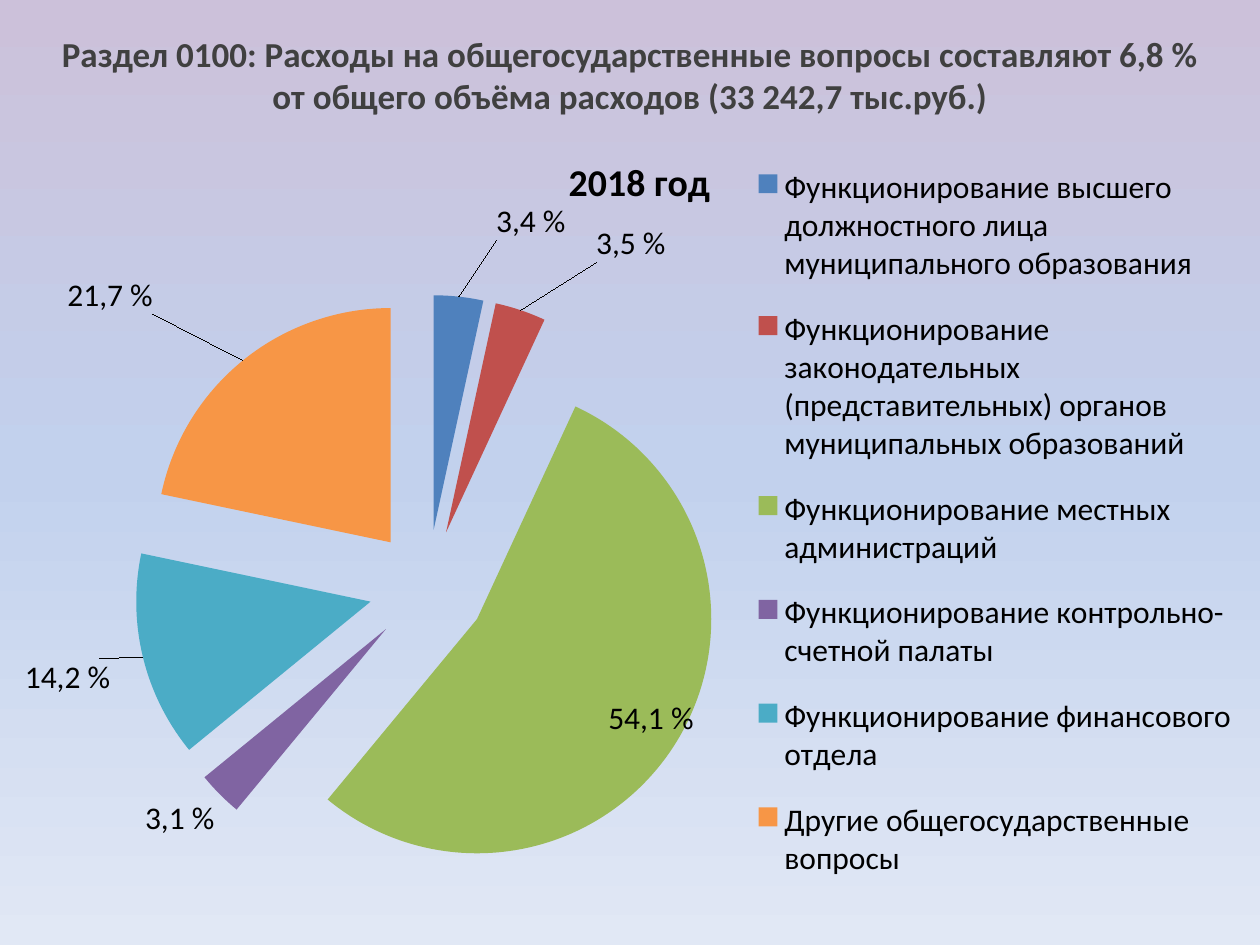
from lxml.etree import SubElement
from pptx import Presentation
from pptx.chart.data import CategoryChartData
from pptx.dml.color import RGBColor
from pptx.enum.chart import XL_CHART_TYPE, XL_LABEL_POSITION, XL_LEGEND_POSITION
from pptx.enum.text import MSO_ANCHOR, PP_ALIGN
from pptx.oxml import parse_xml
from pptx.oxml.ns import nsdecls, qn
from pptx.util import Cm, Pt

FONT = "Calibri"
BLACK = RGBColor(0x00, 0x00, 0x00)
DARK_GREY = RGBColor(0x40, 0x40, 0x40)
LILAC = RGBColor(0xCC, 0xC1, 0xDA)
SKY = RGBColor(0xC2, 0xD1, 0xED)
PALE = RGBColor(0xE1, 0xE8, 0xF5)
BLUE = RGBColor(0x4F, 0x81, 0xBD)
RED = RGBColor(0xC0, 0x50, 0x4D)
GREEN = RGBColor(0x9B, 0xBB, 0x59)
PURPLE = RGBColor(0x80, 0x64, 0xA2)
TEAL = RGBColor(0x4B, 0xAC, 0xC6)
ORANGE = RGBColor(0xF7, 0x96, 0x46)

HEADING = ("Раздел 0100: Расходы на общегосударственные вопросы составляют 6,8 % "
           "от общего объёма расходов (33 242,7 тыс.руб.)")
YEAR = "2018 год"

# Category, share in percent, slice colour, label shift (fractions of the chart)
SLICES = [
    ("Функционирование высшего должностного лица муниципального образования",
     3.4, BLUE, (0.03, -0.06)),
    ("Функционирование законодательных (представительных) органов "
     "муниципальных образований", 3.5, RED, (0.06, -0.05)),
    ("Функционирование местных администраций", 54.1, GREEN, (-0.06, -0.06)),
    ("Функционирование контрольно-счетной палаты", 3.1, PURPLE, None),
    ("Функционирование финансового отдела", 14.2, TEAL, (-0.03, 0)),
    ("Другие общегосударственные вопросы", 21.7, ORANGE, (-0.07, -0.05)),
]


def write_text(frame, text, size, color=BLACK, bold=False, align=None):
    """Put one formatted span into a text frame."""
    para = frame.paragraphs[0]
    para.alignment = align
    span = para.add_run()
    span.text = text
    span.font.name = FONT
    span.font.size = Pt(size)
    span.font.bold = bold
    span.font.color.rgb = color
    return para


def paint_background(page, colors):
    """Fill the page with a vertical gradient of evenly spaced colours."""
    step = 100000 // (len(colors) - 1)
    stops = "".join(
        f'<a:gs pos="{index * step}"><a:srgbClr val="{color}"/></a:gs>'
        for index, color in enumerate(colors))
    fill = page.background.fill
    fill.gradient()
    gradient = page.element.xpath(".//p:bgPr/a:gradFill")[0]
    gradient.getparent().replace(gradient, parse_xml(
        f'<a:gradFill {nsdecls("a")} rotWithShape="1"><a:gsLst>{stops}</a:gsLst>'
        '<a:lin ang="5400000" scaled="0"/></a:gradFill>'))


def add_heading(page):
    box = page.shapes.title
    box.left, box.top, box.width, box.height = Cm(0.7), Cm(0.53), Cm(24), Cm(1.4)
    box.text_frame.word_wrap = True
    box.text_frame.vertical_anchor = MSO_ANCHOR.TOP
    para = write_text(box.text_frame, HEADING, 20, color=DARK_GREY, bold=True,
                      align=PP_ALIGN.CENTER)
    para.space_before = Pt(4)


def place(element, index, **fractions):
    """Give a chart part a manual layout, as child number index."""
    for old in element.findall(qn("c:layout")):
        element.remove(old)
    layout = parse_xml(f'<c:layout {nsdecls("c")}><c:manualLayout/></c:layout>')
    for name, value in fractions.items():
        SubElement(layout[0], qn(f"c:{name}"), val=str(value))
    element.insert(index, layout)


def style_slices(series):
    """Pull the slices apart, colour them and label them."""
    explosion = parse_xml(f'<c:explosion {nsdecls("c")} val="25"/>')
    series.data_labels.show_value = True
    series.data_labels.position = XL_LABEL_POSITION.OUTSIDE_END
    for index, (_, share, color, shift) in enumerate(SLICES):
        point = series.points[index]
        point.format.fill.solid()
        point.format.fill.fore_color.rgb = color
        label = point.data_label
        write_text(label.text_frame, f"{share} %".replace(".", ","), 18)
        label.position = XL_LABEL_POSITION.OUTSIDE_END
        if shift:
            label_element = series.data_labels._element.xpath("c:dLbl")[index]
            place(label_element, 1, x=shift[0], y=shift[1])
    series._element.find(qn("c:tx")).addnext(explosion)


def add_pie(page):
    data = CategoryChartData()
    data.categories = [name for name, *_ in SLICES]
    data.add_series(YEAR, [share for _, share, *_ in SLICES])
    chart = page.shapes.add_chart(XL_CHART_TYPE.PIE, Cm(0.5), Cm(2.34),
                                  Cm(24.6), Cm(16.4), data).chart
    chart.font.name = FONT
    chart.font.size = Pt(18)
    chart.font.color.rgb = BLACK

    # Title
    chart.has_title = True
    write_text(chart.chart_title.text_frame, YEAR, 21.6, bold=True)

    # Legend
    chart.has_legend = True
    chart.legend.position = XL_LEGEND_POSITION.CORNER
    chart.legend.include_in_layout = False

    # Slices and positions
    style_slices(chart.plots[0].series[0])
    space = chart._chartSpace
    place(space.xpath(".//c:title")[0], 1, xMode="edge", yMode="edge", x=0.44, y=0.04)
    place(space.xpath(".//c:legend")[0], 1, xMode="edge", yMode="edge",
          x=0.59, y=0.03, w=0.41, h=0.94)
    place(space.xpath(".//c:plotArea")[0], 0, layoutTarget="inner", xMode="edge",
          yMode="edge", x=0.09, y=0.22, w=0.48, h=0.72)


def main():
    deck = Presentation()
    deck.slide_width, deck.slide_height = Cm(25.4), Cm(19.05)
    page = deck.slides.add_slide(deck.slide_layouts[5])
    paint_background(page, [LILAC, SKY, PALE])
    add_heading(page)
    add_pie(page)
    deck.save("out.pptx")


if __name__ == "__main__":
    main()
